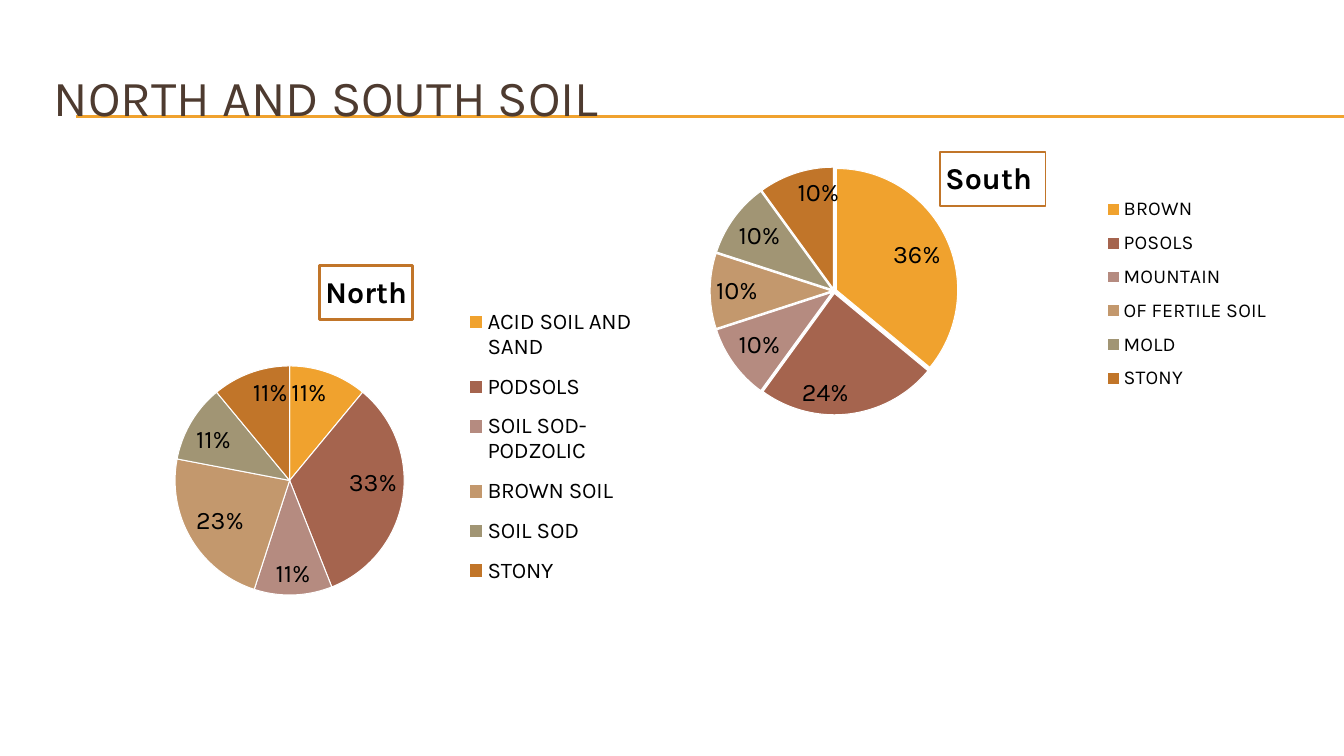
from lxml import etree
from pptx import Presentation
from pptx.chart.data import CategoryChartData
from pptx.dml.color import RGBColor
from pptx.enum.chart import XL_CHART_TYPE, XL_LABEL_POSITION, XL_LEGEND_POSITION
from pptx.enum.shapes import MSO_CONNECTOR
from pptx.enum.text import MSO_ANCHOR
from pptx.oxml.ns import qn
from pptx.util import Emu, Pt

PIE = XL_CHART_TYPE.PIE
INSIDE_END = XL_LABEL_POSITION.INSIDE_END
LEGEND_RIGHT = XL_LEGEND_POSITION.RIGHT
STRAIGHT = MSO_CONNECTOR.STRAIGHT
MIDDLE = MSO_ANCHOR.MIDDLE

PX = 9071.43  # EMU per px
FONT = "Karla"
COLORS = {"heading": "4E3B30", "text": "000000", "white": "FFFFFF",
          "amber": "F0A22E", "brick": "A5644E", "rose": "B58B80",
          "tan": "C3986D", "olive": "A19574", "rust": "C17529"}
SLICES = ["amber", "brick", "rose", "tan", "olive", "rust"]


def px(length):
    return Emu(round(length * PX))


def rgb(name):
    return RGBColor.from_string(COLORS[name])


def style_font(font, size, color="text", bold=False):
    font.name = FONT
    font.size = Pt(size)
    font.bold = bold
    font.color.rgb = rgb(color)


def add_rule(slide, left, right, y):
    rule = slide.shapes.add_connector(STRAIGHT, px(left), px(y), px(right), px(y))
    rule.line.color.rgb = rgb("amber")
    rule.line.width = Pt(0.75)
    etree.SubElement(rule._element.spPr, qn("a:effectLst"))


def add_heading(slide, text, left, top, width, height):
    frame = slide.shapes.add_textbox(*map(px, (left, top, width, height))).text_frame
    frame.word_wrap = True
    frame.vertical_anchor = MIDDLE
    heading = frame.paragraphs[0]
    heading.text = text
    style_font(heading.font, 36, "heading")


def set_layout(part, before, frame, x, y, w=None, h=None, inner=False):
    """Place a chart part at px x, y (and size) on the slide."""
    left, top, width, height = frame
    for old in part.findall(qn("c:layout")):
        part.remove(old)
    layout = etree.Element(qn("c:layout"))
    manual = etree.SubElement(layout, qn("c:manualLayout"))
    values = {"layoutTarget": "inner"} if inner else {}
    values.update(xMode="edge", yMode="edge",
                  x=(x - left) / width, y=(y - top) / height)
    if w:
        values.update(w=w / width, h=h / height)
    for tag, value in values.items():
        text = value if isinstance(value, str) else f"{value:.3f}"
        etree.SubElement(manual, qn(f"c:{tag}")).set("val", text)
    part.insert(before, layout)


def add_soil_pie(slide, title, soils, frame, title_at, plot_box, legend_box,
                 legend_size, border, explosion=0):
    data = CategoryChartData()
    data.categories = list(soils)
    data.add_series("Series 1", list(soils.values()))
    chart = slide.shapes.add_chart(PIE, *map(px, frame), data).chart
    style_font(chart.font, 18)

    # Boxed title
    chart.has_title = True
    heading = chart.chart_title
    heading.text_frame.text = title
    style_font(heading.text_frame.paragraphs[0].font, 21.6, bold=True)
    heading.format.line.color.rgb = rgb("rust")
    heading.format.line.width = Pt(border)
    title_part = heading._element
    set_layout(title_part, 1, frame, *title_at)
    title_part.find(qn("c:overlay")).set("val", "1")

    # Legend
    chart.has_legend = True
    legend = chart.legend
    legend.position = LEGEND_RIGHT
    legend.include_in_layout = False
    style_font(legend.font, legend_size)
    set_layout(legend._element, 1, frame, *legend_box)

    # Slices and percentages
    plot = chart.plots[0]
    plot.vary_by_categories = True
    series = plot.series[0]
    for index, color in enumerate(SLICES):
        look = series.points[index].format
        look.fill.solid()
        look.fill.fore_color.rgb = rgb(color)
        look.line.color.rgb = rgb("white")
        look.line.width = Pt(0.75)
    if explosion:
        first_point = series._element.find(qn("c:dPt"))
        burst = etree.Element(qn("c:explosion"))
        burst.set("val", str(explosion))
        first_point.addprevious(burst)
    plot.has_data_labels = True
    labels = plot.data_labels
    labels.show_percentage = True
    labels.show_value = False
    labels.number_format = "0%"
    labels.number_format_is_linked = False
    labels.position = INSIDE_END
    style_font(labels.font, 18)
    plot_area = chart._chartSpace.chart.plotArea
    set_layout(plot_area, 0, frame, *plot_box, inner=True)


def main():
    deck = Presentation()
    deck.slide_width, deck.slide_height = px(1344), px(756)
    slide = deck.slides.add_slide(deck.slide_layouts[6])

    # Heading with its double rule
    for y in (116, 117):
        add_rule(slide, 76, 1344, y)
    add_heading(slide, "NORTH AND SOUTH SOIL", 44, 50, 1277, 93)

    # Soil shares
    south = {"BROWN ": 36, "POSOLS": 24, "MOUNTAIN ": 10,
             "OF FERTILE SOIL": 10, "MOLD": 10, "STONY": 10}
    north = {"ACID SOIL AND SAND": 11, "PODSOLS": 33, "SOIL SOD-PODZOLIC": 11,
             "BROWN SOIL": 23, "SOIL SOD ": 11, "STONY": 11}
    add_soil_pie(slide, "South ", south, frame=(611, 143, 666, 274),
                 title_at=(940, 152), plot_box=(710, 167, 248, 248),
                 legend_box=(1101, 187, 172, 214), legend_size=14,
                 border=1, explosion=2)
    add_soil_pie(slide, "North", north, frame=(85, 253, 563, 391),
                 title_at=(320, 266), plot_box=(175, 366, 229, 229),
                 legend_box=(458, 295, 184, 303), legend_size=16, border=2.25)
    deck.save("out.pptx")


if __name__ == "__main__":
    main()
